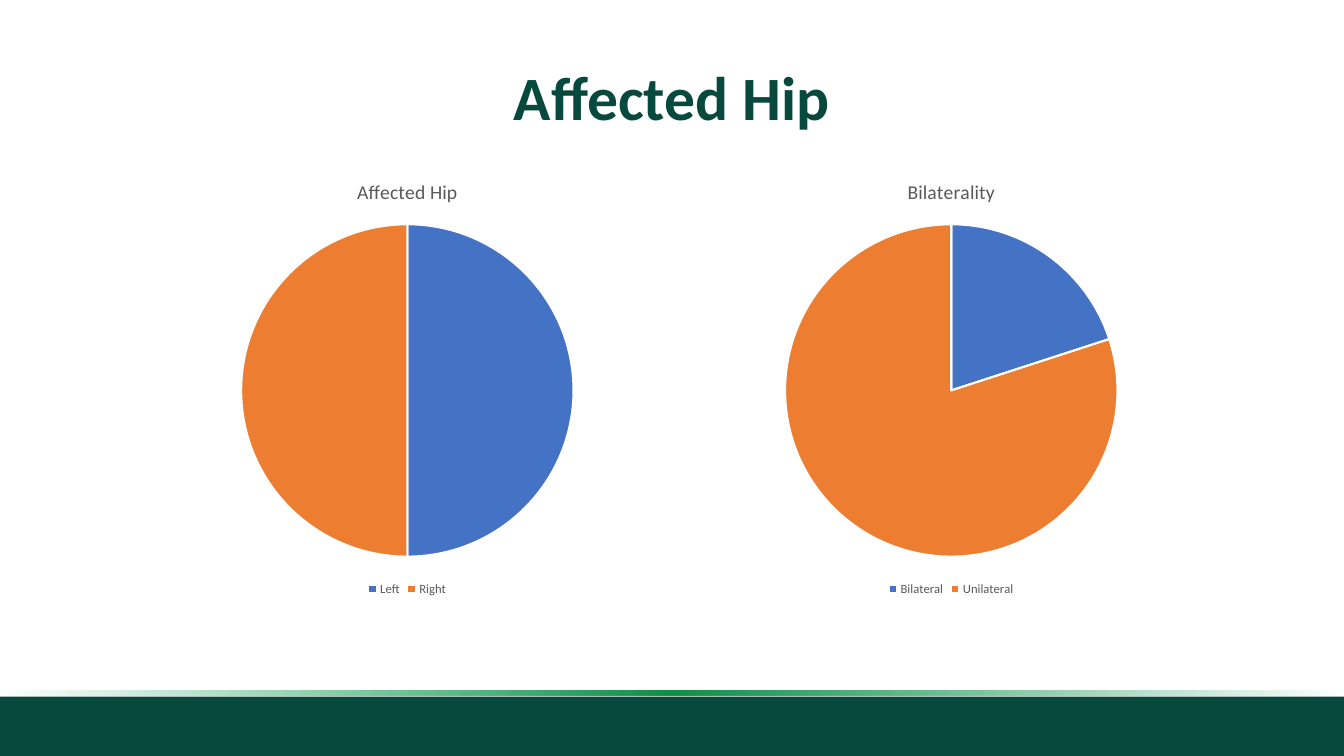
"""Build the Affected Hip slide with two pie charts."""
from lxml import etree
from pptx import Presentation
from pptx.chart.data import CategoryChartData
from pptx.dml.color import RGBColor
from pptx.enum.chart import XL_CHART_TYPE, XL_LEGEND_POSITION
from pptx.enum.shapes import MSO_SHAPE
from pptx.enum.text import MSO_ANCHOR, PP_ALIGN
from pptx.util import Pt

RECT = MSO_SHAPE.RECTANGLE
PIE = XL_CHART_TYPE.PIE
BOTTOM = XL_LEGEND_POSITION.BOTTOM
MIDDLE = MSO_ANCHOR.MIDDLE
CENTER = PP_ALIGN.CENTER
FACE = "Calibri"
NS = "http://schemas.openxmlformats.org/drawingml/2006/main"
COLORS = {"deep": "07493C", "blue": "4472C4", "orange": "ED7D31",
          "gray": "595959", "black": "000000", "white": "FFFFFF"}
STOPS = [(0, "0D9D4F", 0), (50, "0C9049", 100), (100, "0FAB56", 0)]


def tint(name):
    return RGBColor.from_string(COLORS[name])


def style(font, size, color, bold=False):
    values = {"name": FACE, "size": Pt(size), "bold": bold}
    for key, value in values.items():
        setattr(font, key, value)
    font.color.rgb = tint(color)


deck = Presentation()
deck.slide_width, deck.slide_height = Pt(960), Pt(540)
slide = deck.slides.add_slide(deck.slide_layouts[5])
shapes = slide.shapes

bars = []
for top, height in [(497.5, 42.5), (493, 4)]:
    bar = shapes.add_shape(RECT, Pt(0), Pt(top), Pt(960), Pt(height))
    bar.shadow.inherit = False
    bar.fill.solid()
    bar.fill.fore_color.rgb = tint("deep")
    bar.line.fill.background()
    bars.append(bar)

grad = etree.Element(f"{{{NS}}}gradFill", rotWithShape="1")
stops = etree.SubElement(grad, f"{{{NS}}}gsLst")
for place, color, alpha in STOPS:
    stop = etree.SubElement(stops, f"{{{NS}}}gs", pos=str(place * 1000))
    shade = etree.SubElement(stop, f"{{{NS}}}srgbClr", val=color)
    etree.SubElement(shade, f"{{{NS}}}alpha", val=str(alpha * 1000))
etree.SubElement(grad, f"{{{NS}}}lin", ang=str(180 * 60000), scaled="0")
props = bars[1].element.spPr
props.replace(props.find(f"{{{NS}}}solidFill"), grad)

title = shapes.title
place = {"left": 66, "top": 28.5, "width": 828, "height": 86}
for key, value in place.items():
    setattr(title, key, Pt(value))
title.text = "Affected Hip"
title.text_frame.vertical_anchor = MIDDLE
para = title.text_frame.paragraphs[0]
para.alignment = CENTER
para.line_spacing = 0.9
style(para.runs[0].font, 44, "deep", True)

charts = [
    ("Affected Hip", 88, 406, ["Left", "Right"], [50, 50]),
    ("Bilaterality", 465, 429, ["Bilateral", "Unilateral"], [20, 80]),
]
for head, left, width, names, values in charts:
    data = CategoryChartData()
    data.categories = names
    data.add_series("Series 1", values)
    frame = shapes.add_chart(PIE, Pt(left), Pt(114.5), Pt(width), Pt(314.5), data)
    chart = frame.chart
    style(chart.font, 10, "black")
    chart.has_title = True
    chart.chart_title.include_in_layout = False
    text = chart.chart_title.text_frame
    text.text = head
    style(text.paragraphs[0].runs[0].font, 14, "gray")
    chart.has_legend = True
    chart.legend.position = BOTTOM
    chart.legend.include_in_layout = False
    style(chart.legend.font, 9, "gray")
    plot = chart.plots[0]
    plot.vary_by_categories = True
    for spot, color in enumerate(["blue", "orange"]):
        slice_ = plot.series[0].points[spot].format
        slice_.fill.solid()
        slice_.fill.fore_color.rgb = tint(color)
        slice_.line.color.rgb = tint("white")
        slice_.line.width = Pt(1.5)

deck.save("out.pptx")
